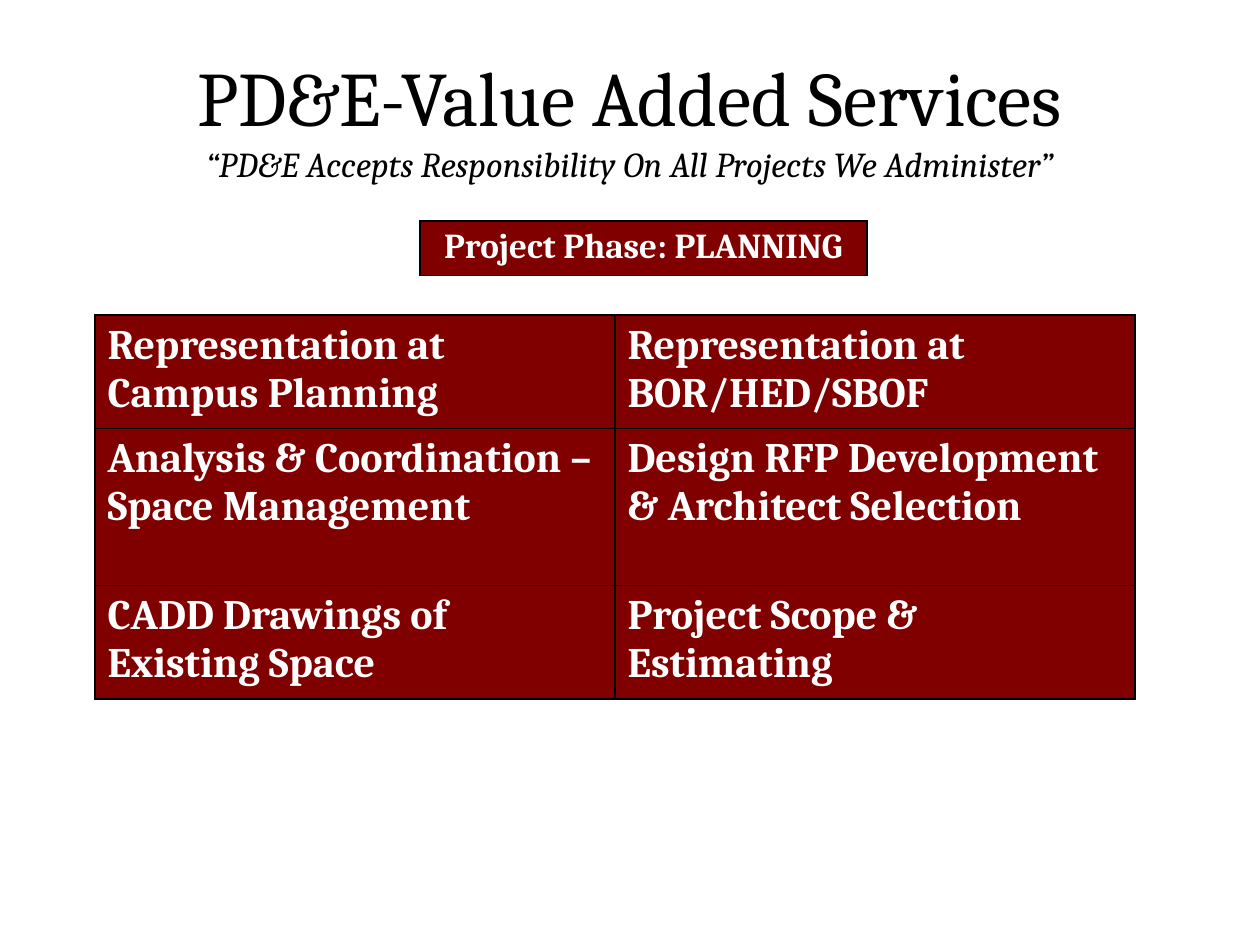
from lxml.etree import SubElement
from pptx import Presentation
from pptx.dml.color import RGBColor
from pptx.enum.text import MSO_ANCHOR, PP_ALIGN
from pptx.oxml.ns import qn
from pptx.util import Emu, Pt

FONT = "Cambria"
BLACK, WHITE, MAROON = "000000", "FFFFFF", "800000"
SERVICES = [
    ["Representation at Campus Planning", "Representation at BOR/HED/SBOF"],
    ["Analysis & Coordination – Space Management",
     "Design RFP Development & Architect Selection"],
    ["CADD Drawings of Existing Space", "Project Scope & Estimating"],
]


def px(n):
    """Turn whole pixels into EMU."""
    return Emu(round(n * 914400 / 126))


def rgb(value):
    """Turn a hex string into a colour."""
    return RGBColor.from_string(value)


def style(r, size, color, bold=False, italic=False):
    """Format one run."""
    r.font.name = FONT
    r.font.size = Pt(size)
    r.font.bold = bold
    r.font.italic = italic
    r.font.color.rgb = rgb(color)


def add_title(s, title, motto):
    """Add the title with the motto on the line below it."""
    tf = s.shapes.add_textbox(px(63), px(38), px(1134), px(158)).text_frame
    tf.word_wrap = True
    tf.vertical_anchor = MSO_ANCHOR.MIDDLE
    p = tf.paragraphs[0]
    p.text = f"{title}\v{motto}"
    p.alignment = PP_ALIGN.CENTER
    style(p.runs[0], 44, BLACK)
    style(p.runs[1], 20, BLACK, italic=True)


def set_borders(cell, width):
    """Draw a black line on all four sides of a cell."""
    tcPr = cell._tc.get_or_add_tcPr()
    for side in ("lnL", "lnR", "lnT", "lnB"):
        ln = SubElement(tcPr, qn(f"a:{side}"), w=str(Pt(width)))
        fill = SubElement(ln, qn("a:solidFill"))
        SubElement(fill, qn("a:srgbClr"), val=BLACK)


def add_grid(s, left, top, col_width, row_heights, rows, size, border, align):
    """Add a maroon table with equal columns and bold white text."""
    n_cols = len(rows[0])
    table = s.shapes.add_table(
        len(rows), n_cols, px(left), px(top),
        px(col_width * n_cols), px(sum(row_heights))).table
    table.first_row = table.horz_banding = False
    for column in table.columns:
        column.width = px(col_width)
    for i, (height, texts) in enumerate(zip(row_heights, rows)):
        table.rows[i].height = px(height)
        for cell, text in zip(table.rows[i].cells, texts):
            set_borders(cell, border)
            cell.fill.solid()
            cell.fill.fore_color.rgb = rgb(MAROON)
            p = cell.text_frame.paragraphs[0]
            p.text = text
            p.alignment = align
            style(p.runs[0], size, WHITE, bold=True)


def main():
    """Build the slide and save it."""
    prs = Presentation()
    prs.slide_width, prs.slide_height = px(1260), px(945)
    s = prs.slides.add_slide(prs.slide_layouts[6])
    add_title(s, "PD&E-Value Added Services",
              "“PD&E Accepts Responsibility On All Projects We Administer”")
    add_grid(s, 420, 221, 447, [54], [["Project Phase: PLANNING"]],
             20, 0.75, PP_ALIGN.CENTER)
    add_grid(s, 95, 315, 520, [112, 157, 110], SERVICES,
             24, 1, PP_ALIGN.LEFT)
    prs.save("out.pptx")


if __name__ == "__main__":
    main()
